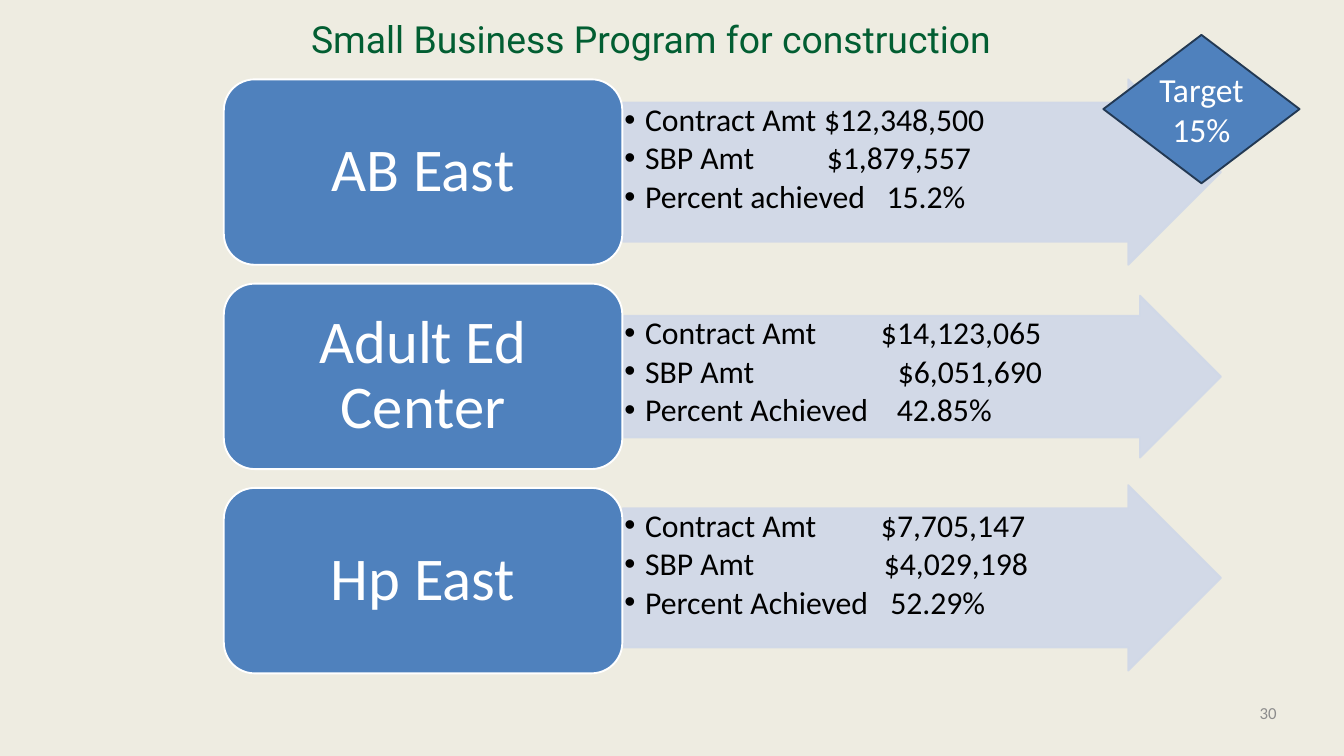
import pptx
import pptx.util
import pptx.dml.color
import pptx.enum.shapes
import pptx.enum.text
import pptx.oxml
import pptx.oxml.ns
from lxml import etree

Pt = pptx.util.Pt
RGBColor = pptx.dml.color.RGBColor
SHAPE = pptx.enum.shapes.MSO_SHAPE
ALIGN = pptx.enum.text.PP_ALIGN
ANCHOR = pptx.enum.text.MSO_ANCHOR
qn = pptx.oxml.ns.qn

CREAM = RGBColor(0xEE, 0xEC, 0xE1)
BLUE = RGBColor(0x4F, 0x81, 0xBD)
NAVY = RGBColor(0x23, 0x39, 0x53)
PALE_BLUE = RGBColor(0xD0, 0xD8, 0xE8)
GREEN = RGBColor(0x02, 0x5E, 0x32)
GRAY = RGBColor(0x8C, 0x8C, 0x8C)
WHITE = RGBColor(0xFF, 0xFF, 0xFF)
BLACK = RGBColor(0, 0, 0)

HEADING = "Small Business Program for construction"
TARGET = "Target 15%"
PAGE = "30"
# Each figure: label, amount, distance of the amount from the list's left edge
PROJECTS = [
    {"name": "AB East", "arrow_top": 85, "arrow_height": 198.7, "figures": [
        ("Contract Amt", "$12,348,500", 214),
        ("SBP Amt", "$1,879,557", 217),
        ("Percent achieved", "15.2%", 281)]},
    {"name": "Adult Ed Center", "arrow_top": 316.8, "arrow_height": 173.5, "figures": [
        ("Contract Amt", "$14,123,065", 275),
        ("SBP Amt", "$6,051,690", 293),
        ("Percent Achieved", "42.85%", 292)]},
    {"name": "Hp East", "arrow_top": 519.8, "arrow_height": 198.7, "figures": [
        ("Contract Amt", "$7,705,147", 275),
        ("SBP Amt", "$4,029,198", 278),
        ("Percent Achieved", "52.29%", 285)]},
]

CARD_LEFT, CARD_TOP, CARD_WIDTH, CARD_HEIGHT = 239.8, 85, 427, 198.7
CARD_PITCH = 218.9
ARROW_LEFT, ARROW_WIDTH = 667.4, 640.8
ARROW_SHAFT = 0.75
LIST_INDENT = 22.3

LABEL = {"size": Pt(65), "name": "Calibri", "color": WHITE}
FIGURE = {"size": Pt(34), "name": "Calibri", "color": BLACK}
BADGE = {"size": Pt(36), "name": "Calibri", "color": WHITE}
TITLE = {"size": Pt(40), "name": "Roboto", "color": GREEN}
NUMBER = {"size": Pt(18), "name": "Calibri", "color": GRAY}


def place(part, left, top, width, height):
    part.left, part.top, part.width, part.height = map(Pt, (left, top, width, height))


def write(paragraph, text, style, align, line_spacing=1.0):
    paragraph.text = text
    paragraph.alignment = align
    paragraph.line_spacing = line_spacing
    paragraph.space_before = Pt(0)
    for key, value in {**style, "bold": False}.items():
        if key == "color":
            paragraph.font.color.rgb = value
        else:
            setattr(paragraph.font, key, value)
    for run in paragraph.runs:
        run.font.size = style["size"]
        run.font.name = style["name"]
        run.font.color.rgb = style["color"]


def set_frame(frame, anchor, horizontal, vertical):
    settings = {
        "word_wrap": True, "auto_size": pptx.enum.text.MSO_AUTO_SIZE.NONE,
        "vertical_anchor": anchor,
        "margin_left": Pt(horizontal), "margin_right": Pt(horizontal),
        "margin_top": Pt(vertical), "margin_bottom": Pt(vertical)}
    for key, value in settings.items():
        setattr(frame, key, value)


def add_solid(slide, kind, box, fill, line):
    solid = slide.shapes.add_shape(kind, *map(Pt, box))
    solid.shadow.inherit = False
    solid.fill.solid()
    solid.fill.fore_color.rgb = fill
    solid.line.color.rgb = line
    solid.line.width = Pt(2)
    return solid


def add_arrow(slide, top, height):
    arrow = add_solid(slide, SHAPE.RIGHT_ARROW, (ARROW_LEFT, top, ARROW_WIDTH, height),
                      PALE_BLUE, PALE_BLUE)
    arrow.adjustments[0] = ARROW_SHAFT
    for color in arrow._element.spPr.iter(qn("a:srgbClr")):
        etree.SubElement(color, qn("a:alpha"), val="90000")


def fill_list(slide, body, project):
    height = project["arrow_height"]
    place(body, ARROW_LEFT, project["arrow_top"] + height * (1 - ARROW_SHAFT) / 2,
          ARROW_WIDTH - height * 3 / 8, height * ARROW_SHAFT)
    frame = body.text_frame
    set_frame(frame, ANCHOR.TOP, 1.5, 1.5)
    for index, (label, amount, stop) in enumerate(project["figures"]):
        paragraph = frame.add_paragraph() if index else frame.paragraphs[0]
        write(paragraph, f"{label}\t{amount}", FIGURE, ALIGN.LEFT, 0.9)
        paragraph.space_after = Pt(4.5)
        properties = paragraph._p.get_or_add_pPr()
        properties.set("marL", str(Pt(LIST_INDENT)))
        properties.set("indent", str(-Pt(LIST_INDENT)))
        bullet = etree.Element(qn("a:buChar"), char="•")
        tabs = etree.Element(qn("a:tabLst"))
        etree.SubElement(tabs, qn("a:tab"), pos=str(Pt(stop)), algn="l")
        defaults = properties.find(qn("a:defRPr"))
        for part in (bullet, tabs):
            defaults.addprevious(part)
    slide.shapes._spTree.append(body._element)  # in front of its arrow


def add_card(slide, row, name):
    card = add_solid(slide, SHAPE.ROUNDED_RECTANGLE,
                     (CARD_LEFT, CARD_TOP + row * CARD_PITCH, CARD_WIDTH, CARD_HEIGHT),
                     BLUE, WHITE)
    set_frame(card.text_frame, ANCHOR.MIDDLE, 19.4, 10)
    write(card.text_frame.paragraphs[0], name, LABEL, ALIGN.CENTER, 0.9)


def main():
    deck = pptx.Presentation()
    deck.slide_width, deck.slide_height = Pt(1440), Pt(810)
    slide = deck.slides.add_slide(deck.slide_layouts.get_by_name("Comparison"))
    slide.background.fill.solid()
    slide.background.fill.fore_color.rgb = CREAM

    heading, *bodies = slide.placeholders
    for spare in bodies[len(PROJECTS):]:
        spare._element.getparent().remove(spare._element)

    place(heading, 87, 13.7, 1221, 55.4)
    set_frame(heading.text_frame, ANCHOR.TOP, 7.2, 3.6)
    write(heading.text_frame.paragraphs[0], HEADING, TITLE, ALIGN.CENTER)

    for row, (project, body) in enumerate(zip(PROJECTS, bodies)):
        add_arrow(slide, project["arrow_top"], project["arrow_height"])
        fill_list(slide, body, project)
        add_card(slide, row, project["name"])

    badge = add_solid(slide, SHAPE.FLOWCHART_DECISION, (1182.2, 37.4, 210.2, 159), BLUE, NAVY)
    set_frame(badge.text_frame, ANCHOR.MIDDLE, 7.2, 3.6)
    write(badge.text_frame.paragraphs[0], TARGET, BADGE, ALIGN.CENTER)

    number = slide.shapes.add_textbox(*map(Pt, (1036.8, 753, 331.2, 40)))
    set_frame(number.text_frame, ANCHOR.TOP, 0, 0)
    write(number.text_frame.paragraphs[0], PAGE, NUMBER, ALIGN.RIGHT)

    deck.save("out.pptx")


if __name__ == "__main__":
    main()
